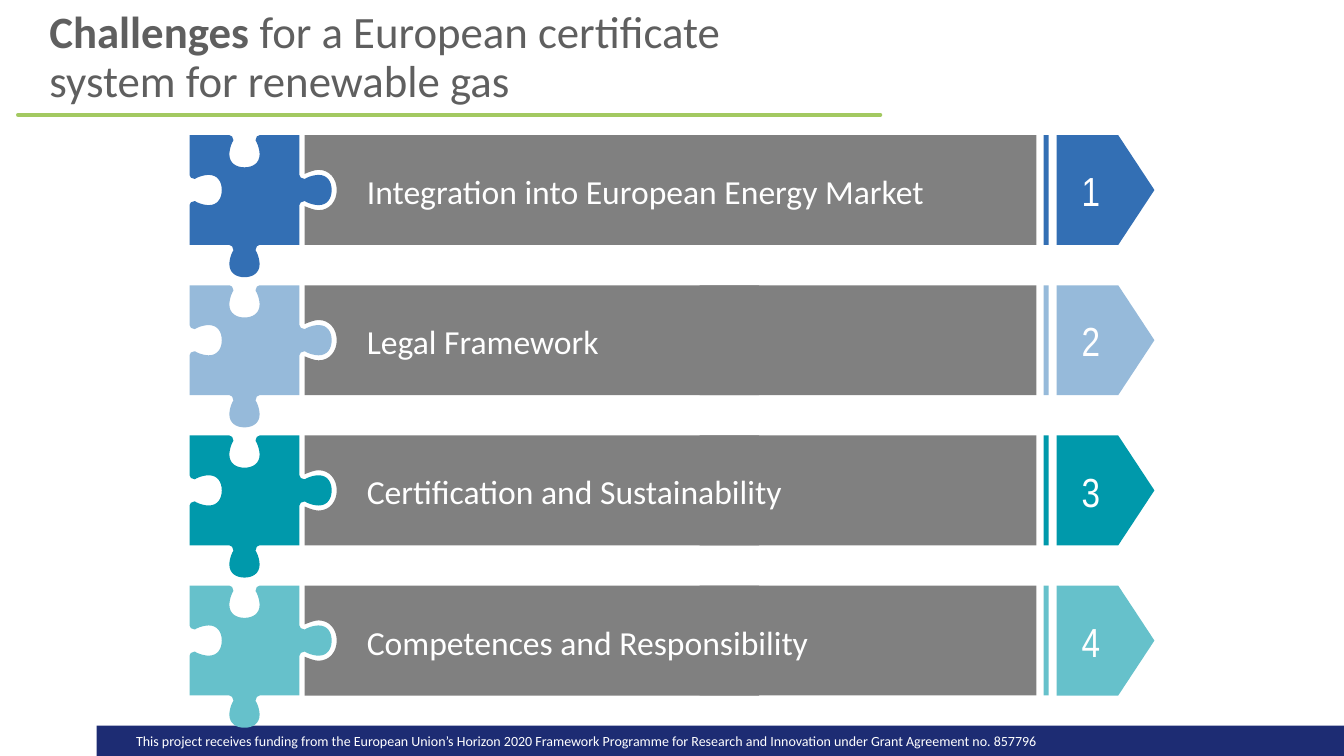
from dataclasses import dataclass

from pptx import Presentation
from pptx import util as u
from pptx.dml import color
from pptx.enum import shapes, text
from pptx.oxml import ns
from pptx.oxml import xmlchemy as xc

Point = tuple[float, float]
Segment = list[Point]

COLORS = {
    "blue": "336FB4",
    "light_blue": "96BADA",
    "teal": "0099AB",
    "aqua": "66C1CB",
    "panel": "808080",
    "title": "5F5F5F",
    "rule": "A3C961",
    "footer": "1D2C73",
    "white": "FFFFFF",
}


@dataclass
class Challenge:
    label: str
    color: str


@dataclass
class Style:
    size: float
    color: str
    font: str = "Calibri"
    bold: bool = False


CHALLENGES = [
    Challenge("Integration into European Energy Market", "blue"),
    Challenge("Legal Framework", "light_blue"),
    Challenge("Certification and Sustainability", "teal"),
    Challenge("Competences and Responsibility", "aqua"),
]

FIRST_TOP, PITCH, SIDE = 1.34, 1.49, 1.09
PIECE_LEFT, PANEL_LEFT, PANEL_JOINT = 1.88, 3.02, 7.53

KNOB = [
    (0, -0.15), (0, -0.13), (0.02, -0.11), (0.05, -0.11),
    (0.05, -0.11), (0.06, -0.11), (0.07, -0.12),
    (0.11, -0.14), (0.16, -0.15), (0.19, -0.15),
    (0.28, -0.15), (0.32, -0.08), (0.32, 0),
]
SOCKET = [
    (0, -0.16), (0.05, -0.18), (0.1, -0.2), (0.14, -0.2),
    (0.25, -0.2), (0.32, -0.11), (0.32, 0),
]


def rgb(name: str) -> color.RGBColor:
    return color.RGBColor.from_string(COLORS[name])


def knob_segments(half: list[Point], center: Point, out: Point, along: Point) -> list[Segment]:
    whole = half + [(depth, -offset) for depth, offset in reversed(half[:-1])]
    points = [
        (center[0] + depth * out[0] + offset * along[0],
         center[1] + depth * out[1] + offset * along[1])
        for depth, offset in whole
    ]
    return [points[:1]] + [points[i:i + 3] for i in range(1, len(points), 3)]


def paint(sp, fill: str) -> None:
    sp.shadow.inherit = False
    sp.fill.solid()
    sp.fill.fore_color.rgb = rgb(fill)
    sp.line.fill.background()


def add_outline(s, start: Point, segments: list[Segment], fill: str) -> None:
    builder = s.shapes.build_freeform(*map(u.Inches, start))
    points = [(u.Inches(x), u.Inches(y)) for segment in segments for x, y in segment]
    builder.add_line_segments(points, close=True)
    sp = builder.convert_to_shape()
    paint(sp, fill)
    outline = sp._element.find(".//" + ns.qn("a:path"))
    nodes = iter(outline.findall(ns.qn("a:lnTo")))
    for segment in segments:
        group = [next(nodes) for _ in segment]
        if len(group) == 3:
            curve = xc.OxmlElement("a:cubicBezTo")
            group[0].addprevious(curve)
            for node in group:
                curve.append(node[0])
                outline.remove(node)


def add_block(s, kind, x: float, y: float, w: float, h: float, fill: str):
    sp = s.shapes.add_shape(kind, u.Inches(x), u.Inches(y), u.Inches(w), u.Inches(h))
    paint(sp, fill)
    return sp


def add_run(p, content: str, style: Style) -> None:
    r = p.add_run()
    r.text = content
    r.font.size = u.Pt(style.size)
    r.font.name = style.font
    r.font.bold = style.bold
    r.font.color.rgb = rgb(style.color)


def add_label(s, x: float, y: float, w: float, h: float, content: str,
              style: Style, inset: float = 0.1) -> None:
    sp = s.shapes.add_textbox(u.Inches(x), u.Inches(y), u.Inches(w), u.Inches(h))
    tf = sp.text_frame
    tf.word_wrap = True
    tf.vertical_anchor = text.MSO_ANCHOR.MIDDLE
    tf.margin_left = u.Inches(inset)
    add_run(tf.paragraphs[0], content, style)


def add_title(s) -> None:
    sp = s.shapes.title
    sp.left, sp.top, sp.width, sp.height = map(u.Inches, (0.39, 0.36, 8.04, 0.75))
    tf = sp.text_frame
    tf.word_wrap = True
    tf.auto_size = text.MSO_AUTO_SIZE.NONE
    tf.vertical_anchor = text.MSO_ANCHOR.BOTTOM
    p = tf.paragraphs[0]
    p.alignment = text.PP_ALIGN.LEFT
    p.line_spacing = 0.9
    add_run(p, "Challenges ", Style(32, "title", bold=True))
    add_run(p, "for a European certificate system for renewable gas", Style(32, "title"))


def add_rule(s) -> None:
    line = s.shapes.add_connector(
        shapes.MSO_CONNECTOR.STRAIGHT, *map(u.Inches, (0.18, 1.14, 8.73, 1.14)))
    line.line.color.rgb = rgb("rule")
    line.line.width = u.Pt(3)
    props = line._element.spPr
    props.find(ns.qn("a:ln")).set("cap", "rnd")
    props.append(xc.OxmlElement("a:effectLst"))


def add_footer(s) -> None:
    add_block(s, shapes.MSO_SHAPE.RECTANGLE, 0.96, 7.2, 12.37, 0.3, "footer")
    add_label(s, 1.04, 7.22, 9.57, 0.27,
              "This project receives funding from the European Union’s Horizon 2020 "
              "Framework Programme for Research and Innovation under Grant Agreement "
              "no. 857796", Style(10, "white"), inset=0.31)


def add_challenge(s, number: int, item: Challenge) -> None:
    top = FIRST_TOP + (number - 1) * PITCH
    bottom, middle = top + SIDE, top + SIDE / 2
    right, center = PIECE_LEFT + SIDE, PIECE_LEFT + SIDE / 2

    panel = knob_segments(SOCKET, (PANEL_LEFT, middle), (1, 0), (0, 1))
    panel += [[(PANEL_LEFT, bottom)], [(PANEL_JOINT, bottom)], [(PANEL_JOINT, top)]]
    add_outline(s, (PANEL_LEFT, top), panel, "panel")
    add_block(s, shapes.MSO_SHAPE.RECTANGLE, 6.94, top, 3.34, SIDE, "panel")
    add_block(s, shapes.MSO_SHAPE.RECTANGLE, 10.35, top, 0.05, SIDE, item.color)

    sides = [
        ((PIECE_LEFT, middle), (1, 0), (0, 1), (PIECE_LEFT, bottom)),
        ((center, bottom), (0, 1), (1, 0), (right, bottom)),
        ((right, middle), (1, 0), (0, -1), (right, top)),
        ((center, top), (0, 1), (-1, 0), (PIECE_LEFT, top)),
    ]
    piece = []
    for knob_center, out, along, corner in sides:
        piece += knob_segments(KNOB, knob_center, out, along) + [[corner]]
    add_outline(s, (PIECE_LEFT, top), piece, item.color)

    arrow = add_block(s, shapes.MSO_SHAPE.PENTAGON, 10.48, top, 0.97, SIDE, item.color)
    arrow.adjustments[0] = 0.37
    add_label(s, 3.54, top + 0.3, 5.9, 0.51, item.label, Style(24, "white"))
    add_label(s, 10.63, top + 0.26, 1.08, 0.58, str(number),
              Style(29, "white", "Arial Narrow"))


def main() -> None:
    prs = Presentation()
    prs.slide_width, prs.slide_height = u.Inches(13.33), u.Inches(7.5)
    s = prs.slides.add_slide(prs.slide_layouts[5])
    add_footer(s)
    add_rule(s)
    add_title(s)
    for number, item in enumerate(CHALLENGES, 1):
        add_challenge(s, number, item)
    prs.save("out.pptx")


if __name__ == "__main__":
    main()
